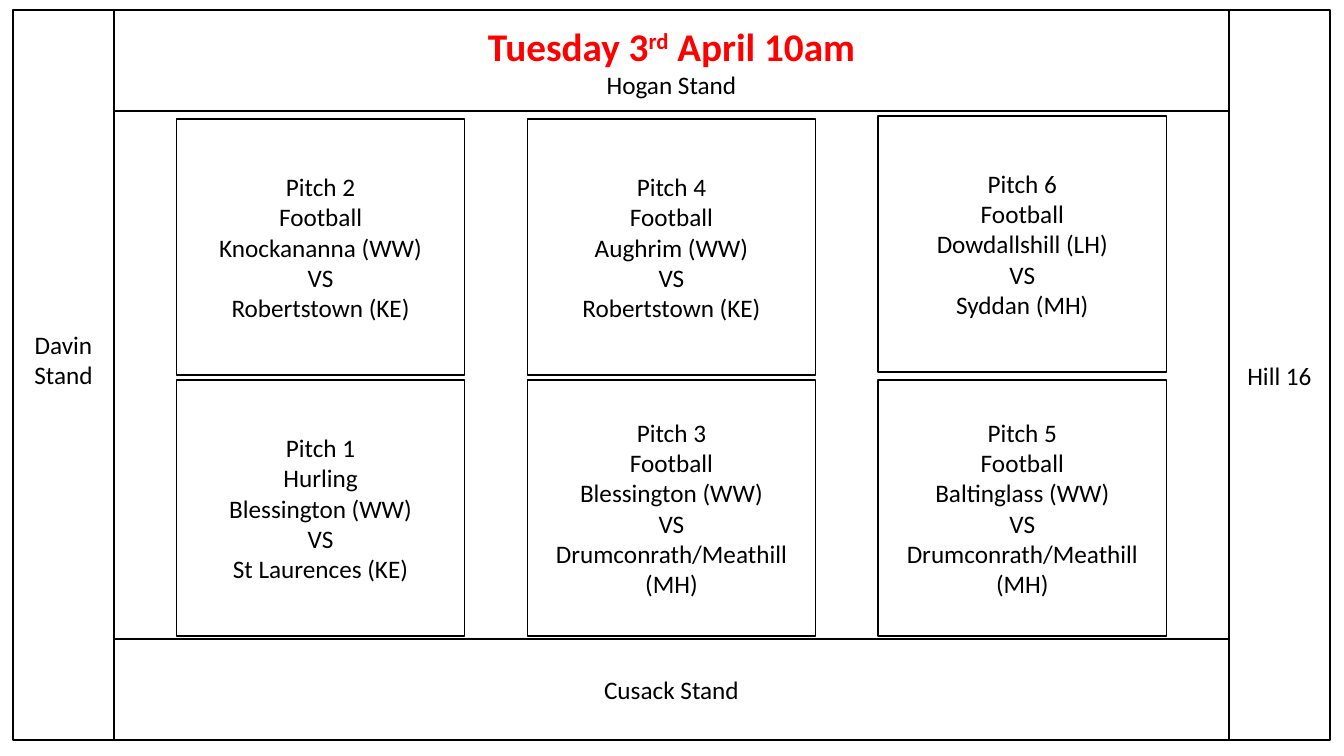
from pptx import Presentation
from pptx.dml.color import RGBColor
from pptx.enum import shapes, text
from pptx.util import Inches, Pt

COLORS = {"ink": "000000", "heading": "FF0000"}
FONT = "Calibri"
STAND = 1
LEFT, TOP, WIDTH, HEIGHT = 0.13, 0.1, 13.06, 7.24
PITCH_WIDTH, PITCH_HEIGHT = 2.86, 2.54
COLUMN_STEP = 3.48

PITCH_ROWS = [
    (1.18, [
        ("Pitch 2", "Football", "Knockananna (WW)", "Robertstown (KE)"),
        ("Pitch 4", "Football", "Aughrim (WW)", "Robertstown (KE)"),
        ("Pitch 6", "Football", "Dowdallshill (LH)", "Syddan (MH)"),
    ]),
    (3.77, [
        ("Pitch 1", "Hurling", "Blessington (WW)", "St Laurences (KE)"),
        ("Pitch 3", "Football", "Blessington (WW)", "Drumconrath/Meathill (MH)"),
        ("Pitch 5", "Football", "Baltinglass (WW)", "Drumconrath/Meathill (MH)"),
    ]),
]
RAISED_PITCHES = {"Pitch 6": 0.03}


def style_run(run, size=18, color="ink", bold=False):
    run.font.name = FONT
    run.font.size = Pt(size)
    run.font.bold = bold
    run.font.color.rgb = RGBColor.from_string(COLORS[color])


def style_box(shape):
    shape.fill.background()
    shape.line.color.rgb = RGBColor.from_string(COLORS["ink"])
    shape.line.width = Pt(1)
    frame = shape.text_frame
    frame.word_wrap = True
    frame.auto_size = text.MSO_AUTO_SIZE.NONE
    frame.vertical_anchor = text.MSO_ANCHOR.MIDDLE
    for paragraph in frame.paragraphs:
        paragraph.alignment = text.PP_ALIGN.CENTER
        for run in paragraph.runs:
            style_run(run)


def add_box(slide, left, top, width, height, label):
    shape = slide.shapes.add_shape(
        shapes.MSO_SHAPE.RECTANGLE,
        Inches(left), Inches(top), Inches(width), Inches(height))
    shape.shadow.inherit = False
    shape.text_frame.text = label
    style_box(shape)
    return shape


def add_header(slide, left, top, width, height):
    title = slide.shapes.title
    title.left, title.top = Inches(left), Inches(top)
    title.width, title.height = Inches(width), Inches(height)
    frame = title.text_frame
    frame.text = "Tuesday 3\nHogan Stand"
    date = frame.paragraphs[0]
    ordinal = date.add_run()
    ordinal.text = "rd"
    date.add_run().text = " April 10am"
    style_box(title)
    for run in date.runs:
        style_run(run, 28, "heading", True)
    ordinal.font._element.set("baseline", "30000")


def add_stands(slide, left, top, width, height):
    inner_left, inner_width = left + STAND, width - 2 * STAND
    davin = add_box(slide, left, top, STAND, height, "Davin Stand")
    davin.text_frame.margin_bottom = Inches(0.35)
    add_box(slide, left + width - STAND, top, STAND, height, "Hill 16")
    add_header(slide, inner_left, top, inner_width, STAND)
    add_box(slide, inner_left, top + height - STAND, inner_width, STAND, "Cusack Stand")


def add_pitch_row(slide, left, top, pitches):
    for column, (pitch, sport, home, away) in enumerate(pitches):
        add_box(slide, left + column * COLUMN_STEP,
                top - RAISED_PITCHES.get(pitch, 0),
                PITCH_WIDTH, PITCH_HEIGHT,
                "\n".join([pitch, sport, home, "VS", away]))


def main():
    presentation = Presentation()
    presentation.slide_width = Inches(13.33)
    presentation.slide_height = Inches(7.5)
    slide = presentation.slides.add_slide(presentation.slide_layouts.get_by_name("Title Only"))
    add_stands(slide, LEFT, TOP, WIDTH, HEIGHT)
    for top, pitches in PITCH_ROWS:
        add_pitch_row(slide, 1.75, top, pitches)
    presentation.save("out.pptx")


if __name__ == "__main__":
    main()
